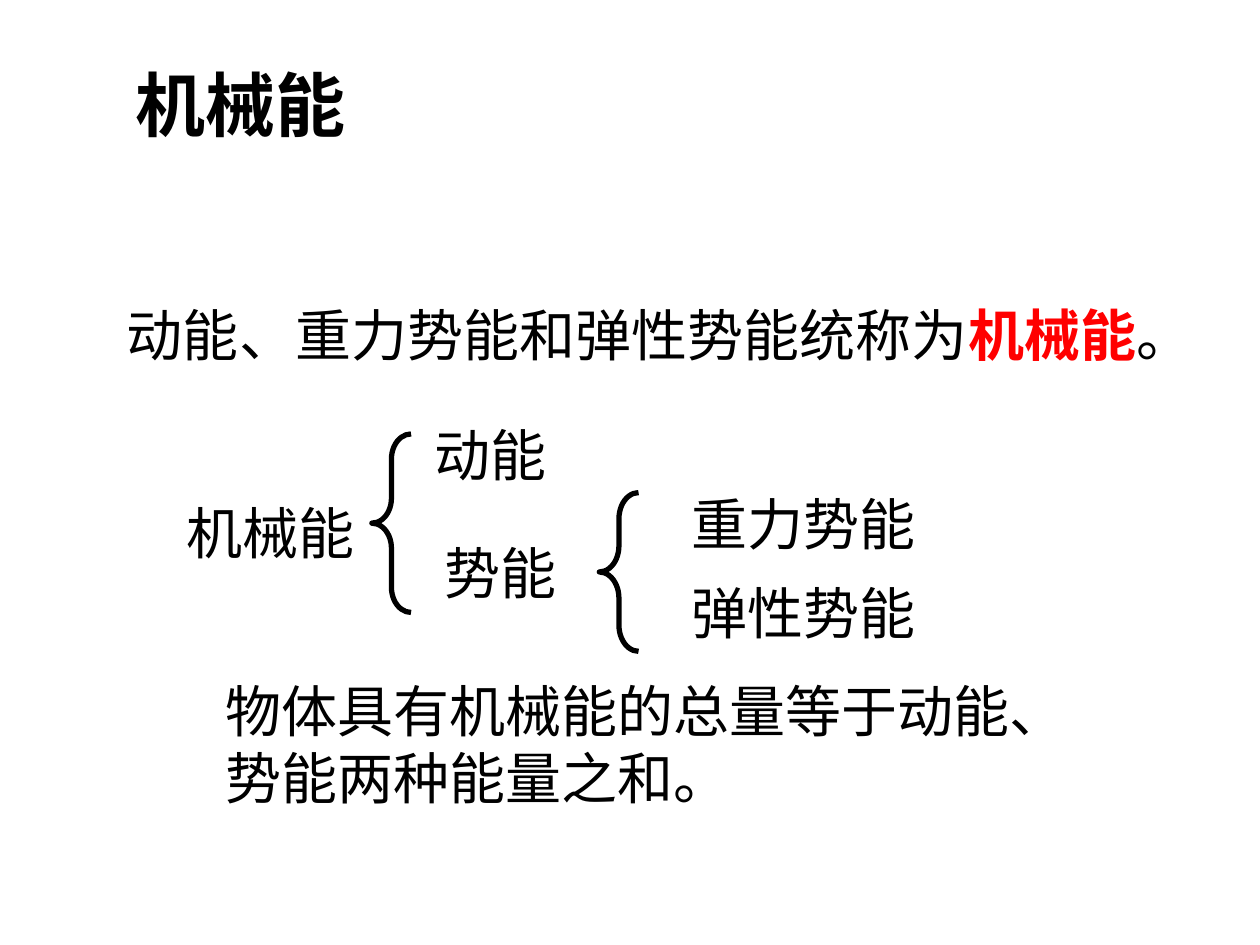
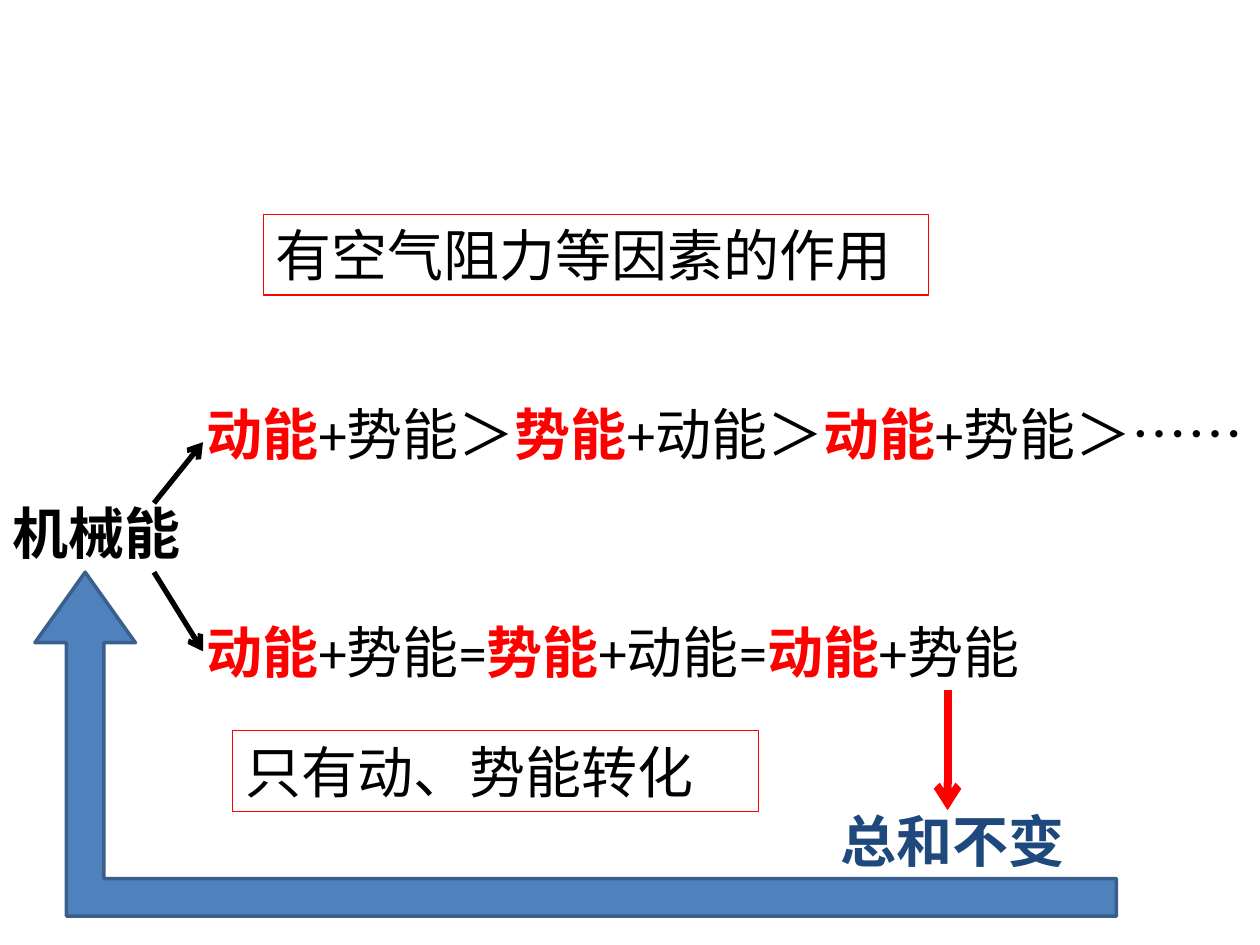
from lxml import etree
from pptx import Presentation
from pptx.dml.color import RGBColor
from pptx.enum.shapes import MSO_CONNECTOR as Connector, MSO_SHAPE as Shape
from pptx.enum.text import MSO_ANCHOR as Anchor, MSO_AUTO_SIZE as AutoSize, PP_ALIGN as Align
from pptx.oxml.ns import qn
from pptx.util import Pt

BLACK, RED, NAVY = "000000", "FF0000", "1F497D"
BLUE, BLUE_EDGE = "4F81BD", "3A5F8C"
BODY_FONT, HEAD_FONT = "Calibri", "Noto Sans CJK SC"
LINE_HEIGHT = 46


def color(code):
    return RGBColor.from_string(code)


class Painter:
    """Holds the deck, its text style and the current slide."""

    def __init__(self):
        self.deck = Presentation()
        self.deck.slide_width, self.deck.slide_height = Pt(720), Pt(540)
        self.page = None

    def new_page(self):
        self.page = self.deck.slides.add_slide(self.deck.slide_layouts[6])

    def fill_text(self, box, text, size=32, font=BODY_FONT, ink=BLACK, bold=False, wrap=True):
        """Fill a box; parts between bars are key words in bold red."""
        frame = box.text_frame
        frame.word_wrap = wrap
        frame.auto_size = AutoSize.SHAPE_TO_FIT_TEXT
        frame.vertical_anchor = Anchor.TOP
        para = frame.paragraphs[0]
        para.alignment = Align.LEFT
        for index, part in enumerate(text.split("|")):
            if not part:
                continue
            is_key = index % 2 == 1
            span = para.add_run()
            span.text = part
            span.font.size = Pt(size)
            span.font.bold = bold or is_key
            span.font.color.rgb = color(RED if is_key else ink)
            span.font.name = font
            east_asian = etree.SubElement(span.font._element, qn("a:ea"))
            east_asian.set("typeface", HEAD_FONT)

    def text(self, left, top, width, text, height=LINE_HEIGHT, **style):
        box = self.page.shapes.add_textbox(Pt(left), Pt(top), Pt(width), Pt(height))
        self.fill_text(box, text, **style)

    def shape(self, kind, left, top, width, height, edge, weight, fill=None, adjust=()):
        box = self.page.shapes.add_shape(kind, Pt(left), Pt(top), Pt(width), Pt(height))
        box.shadow.inherit = False
        if fill:
            box.fill.solid()
            box.fill.fore_color.rgb = color(fill)
        else:
            box.fill.background()
        box.line.color.rgb = color(edge)
        box.line.width = Pt(weight)
        for index, value in enumerate(adjust):
            box.adjustments[index] = value
        return box

    def brace(self, left, top, height, curve):
        self.shape(Shape.LEFT_BRACE, left, top, 22.4, height, BLACK, 3, adjust=(curve, 0.5))

    def framed_text(self, left, top, width, text):
        box = self.shape(Shape.RECTANGLE, left, top, width, LINE_HEIGHT, RED, 0.75)
        self.fill_text(box, text)

    def arrow(self, start, end, ink=BLACK, weight=3):
        line = self.page.shapes.add_connector(
            Connector.STRAIGHT, *(Pt(value) for value in (*start, *end)))
        line.line.color.rgb = color(ink)
        line.line.width = Pt(weight)
        outline = line._element.spPr.find(qn("a:ln"))
        etree.SubElement(outline, qn("a:tailEnd")).set("type", "arrow")
        etree.SubElement(line._element.spPr, qn("a:effectLst"))


def draw_definition(painter):
    painter.new_page()
    painter.text(70.5, 31.7, 153.5, "机械能", height=55.5, size=40, font=HEAD_FONT, bold=True)
    painter.text(65.5, 168, 612, "动能、重力势能和弹性势能统称为|机械能|。")
    painter.text(121.5, 383, 521.5, "物体具有机械能的总量等于动能、势能两种能量之和。", height=85)

    # Tree of energy kinds
    for left, top, width, label in (
        (99.5, 281.5, 136, "机械能"),
        (241, 236.5, 85, "动能"),
        (247, 304, 85, "势能"),
        (388, 276, 153.5, "重力势能"),
        (388, 327, 153.5, "弹性势能"),
    ):
        painter.text(left, top, width, label)
    painter.brace(212.5, 248, 102, 0.64)
    painter.brace(342.5, 281.5, 90.7, 0.67)


def draw_conservation(painter):
    painter.new_page()

    # Conditions and the two chains of energy
    painter.framed_text(150.5, 122.5, 380, "有空气阻力等因素的作用")
    painter.text(0, 281.5, 111.5, "机械能", font=HEAD_FONT, bold=True, wrap=False)
    for top, width, sign, ending in ((224.5, 609, "＞", "＞……"), (349.2, 578, "=", "")):
        terms = ("|动能|+势能", "|势能|+动能", "|动能|+势能")
        painter.text(111, top, width, sign.join(terms) + ending)
    painter.framed_text(133, 417.6, 300.3, "只有动、势能转化")
    painter.text(473, 457.2, 158.5, "总和不变", ink=NAVY, bold=True)

    # Return arrow from the constant sum to mechanical energy
    back = painter.shape(Shape.BENT_UP_ARROW, 20, 327, 618, 196.5, BLUE_EDGE, 2,
                         fill=BLUE, adjust=(0.109, 0.146, 0.205))
    back._element.spPr.find(qn("a:xfrm")).set("flipH", "1")

    # Straight arrows
    painter.arrow((541.5, 394.5), (541.5, 463), RED, 4.5)
    painter.arrow((88, 287.5), (116, 252.7))
    painter.arrow((88, 327), (116, 372.2))


def main():
    painter = Painter()
    draw_definition(painter)
    draw_conservation(painter)
    painter.deck.save("out.pptx")


if __name__ == "__main__":
    main()
